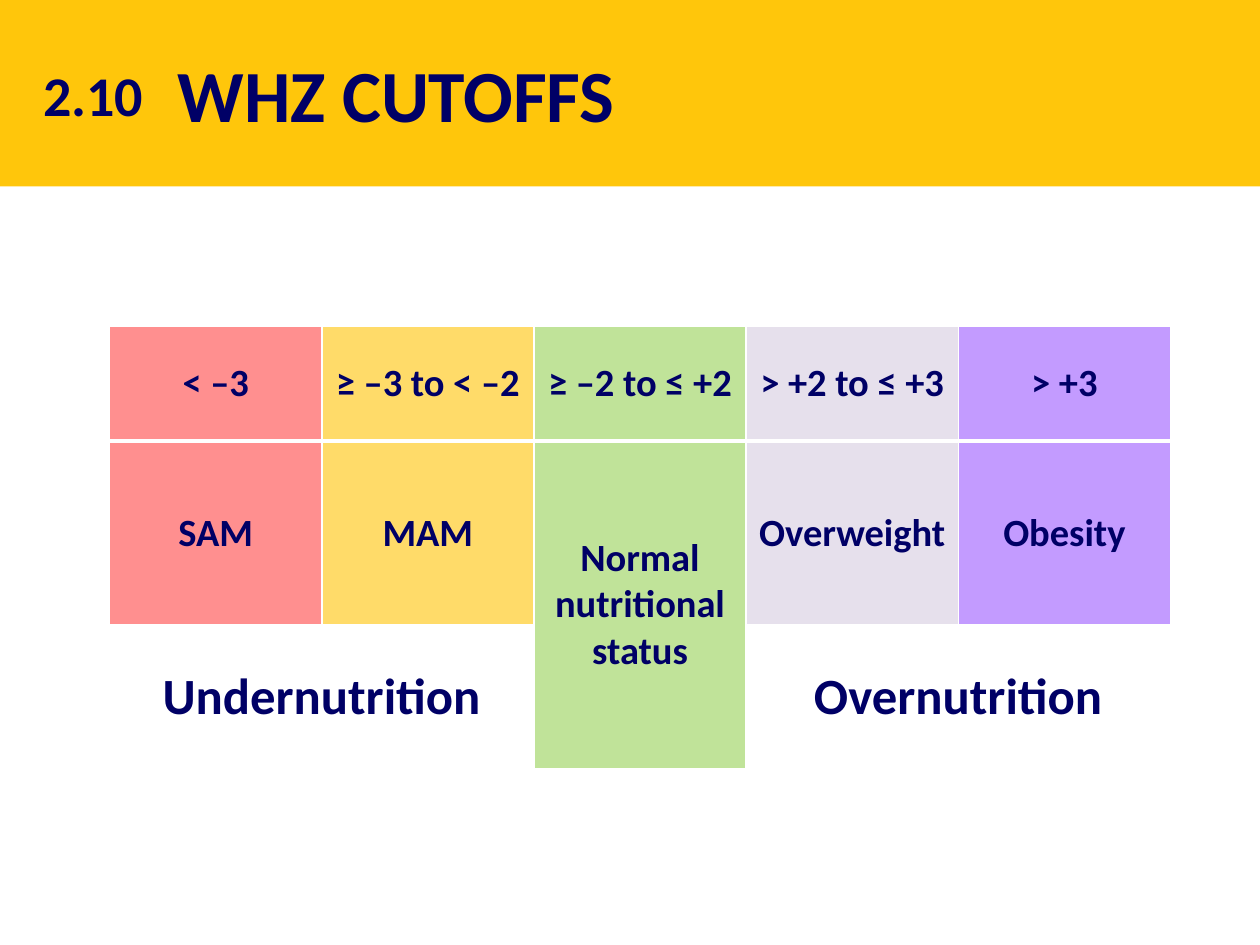
from lxml import etree
from pptx import Presentation
from pptx.dml.color import RGBColor
from pptx.enum.shapes import MSO_SHAPE
from pptx.enum.text import MSO_ANCHOR, MSO_AUTO_SIZE, PP_ALIGN
from pptx.oxml.ns import qn
from pptx.util import Inches, Pt

CENTER, LEFT = PP_ALIGN.CENTER, PP_ALIGN.LEFT
MIDDLE = MSO_ANCHOR.MIDDLE
FIT_SHAPE = MSO_AUTO_SIZE.SHAPE_TO_FIT_TEXT
RECTANGLE = MSO_SHAPE.RECTANGLE

FONT = "Calibri"
NAVY = RGBColor(0x00, 0x00, 0x66)
GOLD = RGBColor(0xFF, 0xC6, 0x0B)
WHITE = RGBColor(0xFF, 0xFF, 0xFF)
RED = RGBColor(0xFF, 0x8F, 0x8F)
YELLOW = RGBColor(0xFF, 0xDB, 0x69)
GREEN = RGBColor(0xC0, 0xE3, 0x99)
LILAC = RGBColor(0xE6, 0xE0, 0xEC)
PURPLE = RGBColor(0xC3, 0x9B, 0xFF)

# Content: one category per column, then the groups below them
NUMBER, TITLE = "2.10", "WHZ CUTOFFS"
CATEGORIES = [
    ("< –3", "SAM", RED),
    ("≥ –3 to < –2", "MAM", YELLOW),
    ("≥ –2 to ≤ +2", "Normal nutritional status", GREEN),
    ("> +2 to ≤ +3", "Overweight", LILAC),
    ("> +3", "Obesity", PURPLE),
]
GROUPS = [("Undernutrition", 0, 1, 0), ("Overnutrition", 3, 4, 6)]
NORMAL_COLUMN = 2

# Table grid
TABLE_LEFT, TABLE_TOP, TABLE_WIDTH = 0.87, 2.59, 8.42
ROW_HEIGHTS = [0.91, 1.47, 1.13]
LAST_ROW = len(ROW_HEIGHTS) - 1
THIN, THICK = 1, 3


def style_paragraph(para, size, align):
    para.alignment = align
    for span in para.runs:
        span.font.name = FONT
        span.font.size = Pt(size)
        span.font.bold = True
        span.font.color.rgb = NAVY


def add_heading(slide, text, area, size, align, wrap):
    box = slide.shapes.add_textbox(*(Inches(length) for length in area))
    box.text_frame.word_wrap = wrap
    box.text_frame.text = text
    style_paragraph(box.text_frame.paragraphs[0], size, align)
    return box


def set_borders(cell, row):
    top = THICK if row > 0 else THIN
    bottom = THICK if row < LAST_ROW and not cell.is_merge_origin else THIN
    sides = [("L", THIN), ("R", THIN), ("T", top), ("B", bottom)]
    properties = cell._tc.get_or_add_tcPr()
    for index, (side, width) in enumerate(sides):
        line = etree.Element(qn(f"a:ln{side}"), w=str(Pt(width)))
        fill = etree.SubElement(line, qn("a:solidFill"))
        etree.SubElement(fill, qn("a:srgbClr"), val=str(WHITE))
        properties.insert(index, line)


def fill_cell(cell, text, size, color=None):
    cell.margin_left = cell.margin_right = cell.margin_top = cell.margin_bottom = 0
    cell.vertical_anchor = MIDDLE
    cell.text = text
    style_paragraph(cell.text_frame.paragraphs[0], size, CENTER)
    if color is None:
        cell.fill.background()
    else:
        cell.fill.solid()
        cell.fill.fore_color.rgb = color


deck = Presentation()
deck.slide_width, deck.slide_height = Inches(10), Inches(7.5)
page = deck.slides.add_slide(deck.slide_layouts[6])

# Header band with number and title
band = page.shapes.add_shape(RECTANGLE, 0, 0, deck.slide_width, Inches(1.48))
band.shadow.inherit = False
band.fill.solid()
band.fill.fore_color.rgb = GOLD
band.line.fill.background()
add_heading(page, TITLE, (1.31, 0.34, 8.18, 0.6), 42, LEFT, True)
number = add_heading(page, NUMBER, (0.24, 0.43, 1, 0.64), 32, CENTER, False)
number.text_frame.auto_size = FIT_SHAPE

# Cutoff table
frame = page.shapes.add_table(
    len(ROW_HEIGHTS), len(CATEGORIES), Inches(TABLE_LEFT), Inches(TABLE_TOP),
    Inches(TABLE_WIDTH), Inches(sum(ROW_HEIGHTS)))
table = frame.table
table.first_row = table.horz_banding = False
for row, height in zip(table.rows, ROW_HEIGHTS):
    row.height = Inches(height)

# Merged areas: the normal column runs down, the groups run across
table.cell(1, NORMAL_COLUMN).merge(table.cell(LAST_ROW, NORMAL_COLUMN))
for _, first, last, _ in GROUPS:
    table.cell(LAST_ROW, first).merge(table.cell(LAST_ROW, last))

for column, (cutoff, status, color) in enumerate(CATEGORIES):
    fill_cell(table.cell(0, column), cutoff, 22, color)
    fill_cell(table.cell(1, column), status, 22, color)
for group, first, _, space_before in GROUPS:
    cell = table.cell(LAST_ROW, first)
    fill_cell(cell, group, 29)
    if space_before:
        cell.text_frame.paragraphs[0].space_before = Pt(space_before)

for row in range(len(ROW_HEIGHTS)):
    for column in range(len(CATEGORIES)):
        cell = table.cell(row, column)
        if cell.is_spanned:
            cell.fill.background()
        set_borders(cell, row)

deck.save("out.pptx")
